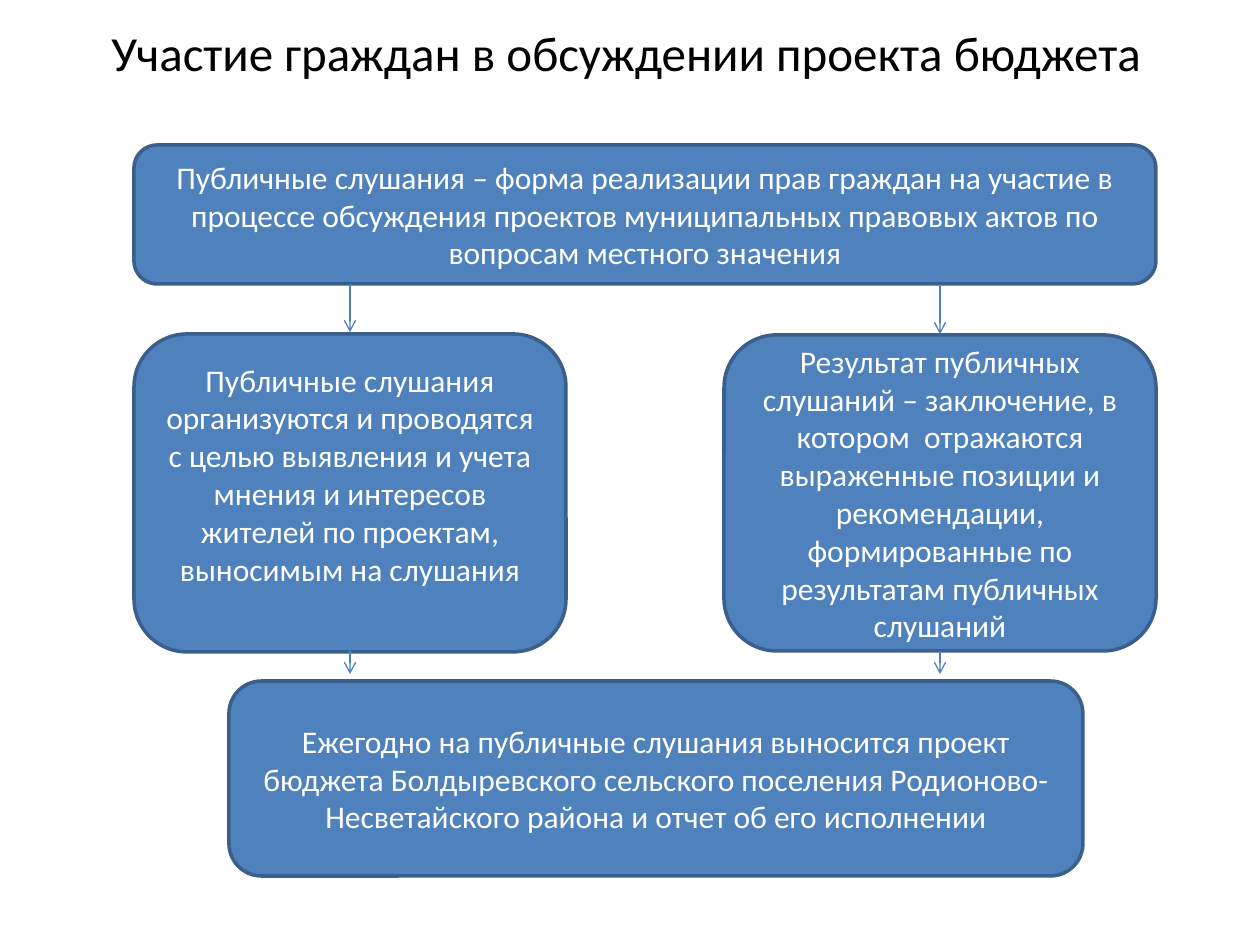
from dataclasses import dataclass

from lxml import etree
from pptx import Presentation
from pptx.dml.color import RGBColor
from pptx.enum.shapes import MSO_CONNECTOR, MSO_SHAPE
from pptx.enum.text import MSO_ANCHOR, PP_ALIGN
from pptx.oxml.ns import qn
from pptx.util import Emu, Pt

LINE = MSO_CONNECTOR.STRAIGHT
ROUND = MSO_SHAPE.ROUNDED_RECTANGLE
MIDDLE = MSO_ANCHOR.MIDDLE
CENTER = PP_ALIGN.CENTER
SCALE = 914400 / 126
TITLE_ONLY = 5


@dataclass(frozen=True)
class Theme:
    font: str = "Calibri"
    ink: str = "000000"
    paper: str = "FFFFFF"
    fill: str = "4F81BD"
    edge: str = "3A5F8C"
    arrow: str = "4B7EBC"
    title: int = 28
    body: int = 18
    lead: int = 20
    border: float = 2
    thin: float = 0.75


def px(*sizes):
    return [Emu(round(size * SCALE)) for size in sizes]


def color(code):
    return RGBColor.from_string(code)


class Deck:
    def __init__(self, theme, width, height):
        self.theme = theme
        self.prs = Presentation()
        self.prs.slide_width, self.prs.slide_height = px(width, height)
        self.slide = self.prs.slides.add_slide(self.prs.slide_layouts[TITLE_ONLY])

    def label(self, frame, text, size, ink):
        frame.text = text
        frame.word_wrap = True
        frame.vertical_anchor = MIDDLE
        para = frame.paragraphs[0]
        para.alignment = CENTER
        font = para.runs[0].font
        font.name = self.theme.font
        font.size = Pt(size)
        font.color.rgb = color(ink)

    def title(self, text, box):
        shape = self.slide.shapes.title
        shape.left, shape.top, shape.width, shape.height = px(*box)
        self.label(shape.text_frame, text, self.theme.title, self.theme.ink)
        shape.text_frame.paragraphs[0].line_spacing = Pt(self.theme.lead)

    def box(self, text, box, foot=6):
        shape = self.slide.shapes.add_shape(ROUND, *px(*box))
        shape.shadow.inherit = False
        shape.fill.solid()
        shape.fill.fore_color.rgb = color(self.theme.fill)
        shape.line.color.rgb = color(self.theme.edge)
        shape.line.width = Pt(self.theme.border)
        self.label(shape.text_frame, text, self.theme.body, self.theme.paper)
        shape.text_frame.margin_bottom = px(foot)[0]

    def arrow(self, x, top, end):
        link = self.slide.shapes.add_connector(LINE, *px(x, top, x, end))
        link.line.color.rgb = color(self.theme.arrow)
        link.line.width = Pt(self.theme.thin)
        # Open arrowhead and no shadow
        props = link._element.spPr
        etree.SubElement(props.find(qn("a:ln")), qn("a:tailEnd"), type="arrow")
        etree.SubElement(props, qn("a:effectLst"))


def main():
    deck = Deck(Theme(), 1260, 945)
    deck.title("Участие граждан в обсуждении проекта бюджета", (35, 6, 1182, 115))

    # Definition above, yearly practice below
    left, right, wide = 134, 724, 432
    deck.box(
        "Публичные слушания – форма реализации прав граждан на участие в "
        "процессе обсуждения проектов муниципальных правовых актов по "
        "вопросам местного значения",
        (left, 145, right + wide - left, 139),
    )
    deck.box(
        "Ежегодно на публичные слушания выносится проект бюджета "
        "Болдыревского сельского поселения Родионово-Несветайского района "
        "и отчет об его исполнении",
        (229, 681, 854, 195),
    )

    # Purpose and result side by side
    deck.box(
        "Публичные слушания организуются и проводятся с целью выявления и "
        "учета мнения и интересов жителей по проектам, выносимым на слушания",
        (left, 334, wide, 318),
        foot=44,
    )
    deck.box(
        "Результат публичных слушаний – заключение, в котором  отражаются "
        "выраженные позиции и рекомендации, формированные по результатам "
        "публичных слушаний",
        (right, 335, wide, 316),
    )

    # Arrows down the middle of each column
    for side, top in ((left, 284), (right, 286)):
        mid = side + wide // 2
        deck.arrow(mid, top, top + 48)
        deck.arrow(mid, 651, 674)

    deck.prs.save("out.pptx")


if __name__ == "__main__":
    main()
